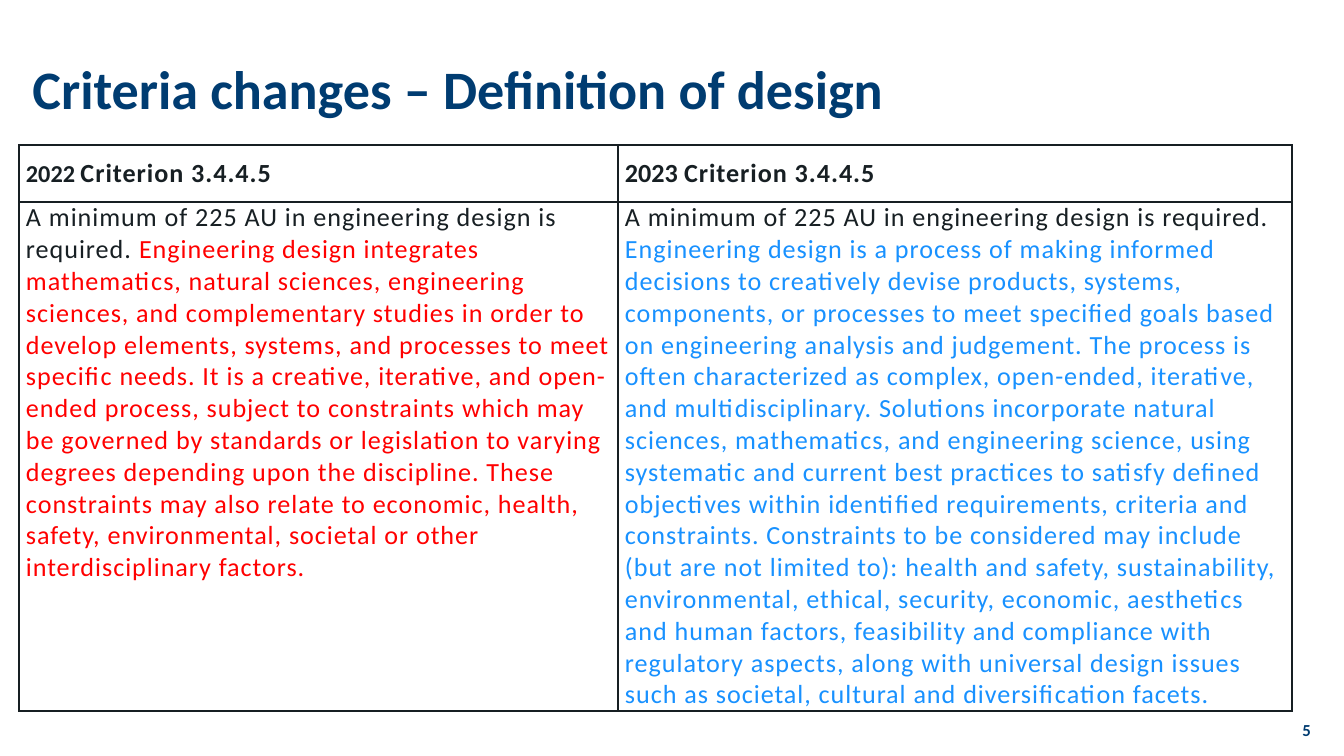
from lxml.etree import SubElement
from pptx import Presentation
from pptx.dml.color import RGBColor
from pptx.enum.text import MSO_ANCHOR as Anchor, MSO_AUTO_SIZE as AutoSize, PP_ALIGN as Align
from pptx.oxml import parse_xml
from pptx.oxml.ns import nsdecls, qn
from pptx.util import Emu, Pt

EMU_PER_PX = 914400 / 134.4
FONT = "Calibri"
COLORS = {"navy": "003C71", "ink": "171F23", "removed": "FF0000", "added": "1891FF"}

MINIMUM = "A minimum of 225 AU in engineering design is required. "
# Definitions, one sentence an item
OLD_DEFINITION = [
    "Engineering design integrates mathematics, natural sciences, engineering sciences, "
    "and complementary studies in order to develop elements, systems, and processes to "
    "meet specific needs.",
    "It is a creative, iterative, and open-ended process, subject to constraints which may "
    "be governed by standards or legislation to varying degrees depending upon the "
    "discipline.",
    "These constraints may also relate to economic, health, safety, environmental, "
    "societal or other interdisciplinary factors.",
]
NEW_DEFINITION = [
    "Engineering design is a process of making informed decisions to creatively devise "
    "products, systems, components, or processes to meet specified goals based on "
    "engineering analysis and judgement.",
    "The process is often characterized as complex, open-ended, iterative, and "
    "multidisciplinary.",
    "Solutions incorporate natural sciences, mathematics, and engineering science, using "
    "systematic and current best practices to satisfy defined objectives within identified "
    "requirements, criteria and constraints.",
    "Constraints to be considered may include (but are not limited to): health and safety, "
    "sustainability, environmental, ethical, security, economic, aesthetics and human "
    "factors, feasibility and compliance with regulatory aspects, along with universal "
    "design issues such as societal, cultural and diversification facets.",
]
# (year, size of the year, definition, colour of the definition, column width)
VERSIONS = [
    ("2022 ", 13, OLD_DEFINITION, "removed", 599),
    ("2023 ", 14, NEW_DEFINITION, "added", 674),
]
ROW_HEIGHTS = [57, 509]


def px(value):
    return Emu(round(value * EMU_PER_PX))


def format_font(font, size, color, bold):
    font.name = FONT
    font.size = Pt(size)
    font.bold = bold
    font.color.rgb = RGBColor.from_string(COLORS[color])


def add_run(paragraph, text, size=14, color="ink", bold=False, spacing=0.5):
    """Add a run whose letter spacing is given in points."""
    run = paragraph.add_run()
    run.text = text
    format_font(run.font, size, color, bold)
    run.font._element.set("spc", str(round(spacing * 100)))


def add_title(slide, text):
    title = slide.shapes.title
    title.left, title.top, title.width, title.height = map(px, (19, 19, 1158, 146))
    frame = title.text_frame
    frame.text = text
    frame.auto_size = AutoSize.NONE
    frame.vertical_anchor = Anchor.MIDDLE
    paragraph = frame.paragraphs[0]
    paragraph.alignment = Align.LEFT
    paragraph.line_spacing = 0.9
    format_font(paragraph.runs[0].font, 29, "navy", True)


def add_page_number(slide, number):
    box = slide.shapes.add_textbox(*map(px, (1275, 719, 49, 22)))
    frame = box.text_frame
    frame.word_wrap = True
    frame.margin_top = frame.margin_bottom = 0
    frame.vertical_anchor = Anchor.MIDDLE
    frame.text = number
    paragraph = frame.paragraphs[0]
    paragraph.alignment = Align.RIGHT
    format_font(paragraph.runs[0].font, 9, "navy", True)


def set_borders(cell):
    properties = cell._tc.get_or_add_tcPr()
    for index, side in enumerate("LRTB"):
        line = parse_xml(f'<a:ln{side} {nsdecls("a")} w="{Pt(1)}"/>')
        fill = SubElement(line, qn("a:solidFill"))
        SubElement(fill, qn("a:srgbClr"), val=COLORS["ink"])
        properties.insert(index, line)


def format_cell(cell, anchor):
    cell.margin_left = cell.margin_right = px(7)
    cell.margin_top = cell.margin_bottom = 0
    cell.vertical_anchor = anchor
    cell.fill.background()
    set_borders(cell)


def add_comparison_table(slide):
    widths = [version[-1] for version in VERSIONS]
    frame = slide.shapes.add_table(
        len(ROW_HEIGHTS), len(VERSIONS),
        px(19), px(145), px(sum(widths)), px(sum(ROW_HEIGHTS)))
    table = frame.table
    table.first_row = table.horz_banding = False
    for row, height in zip(table.rows, ROW_HEIGHTS):
        row.height = px(height)
    for index, (year, year_size, definition, color, width) in enumerate(VERSIONS):
        table.columns[index].width = px(width)
        heading, body = table.cell(0, index), table.cell(1, index)
        format_cell(heading, Anchor.MIDDLE)
        format_cell(body, Anchor.TOP)
        paragraph = heading.text_frame.paragraphs[0]
        add_run(paragraph, year, year_size, bold=True, spacing=0)
        add_run(paragraph, "Criterion 3.4.4.5", bold=True)
        paragraph = body.text_frame.paragraphs[0]
        add_run(paragraph, MINIMUM)
        add_run(paragraph, " ".join(definition), color=color)


def main():
    presentation = Presentation()
    presentation.slide_width, presentation.slide_height = px(1344), px(756)
    slide = presentation.slides.add_slide(presentation.slide_layouts[5])
    add_title(slide, "Criteria changes – Definition of design")
    add_page_number(slide, "5")
    add_comparison_table(slide)
    presentation.save("out.pptx")


if __name__ == "__main__":
    main()
